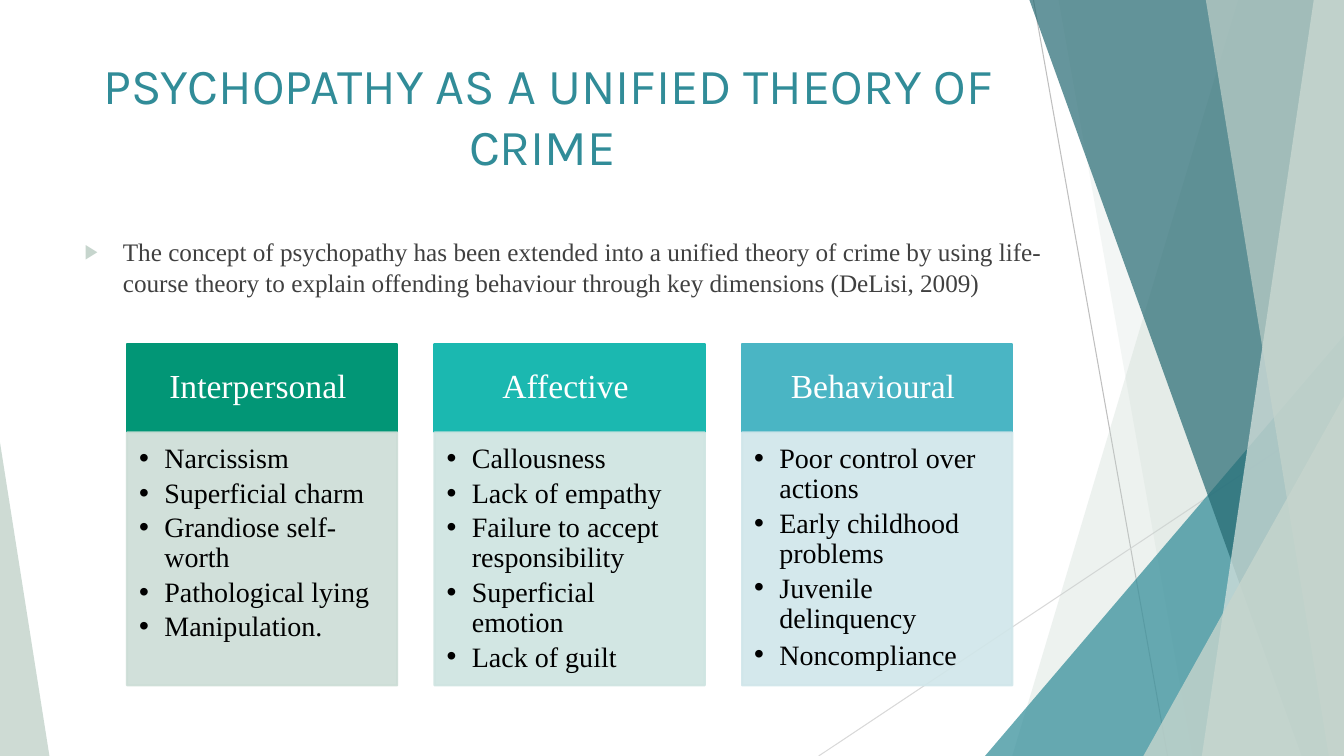
"""Build the slide on psychopathy as a unified theory of crime."""
import pptx
import pptx.dml.color
import pptx.enum.shapes
import pptx.enum.text
import pptx.oxml
import pptx.oxml.ns
import pptx.util

Inches = pptx.util.Inches
Pt = pptx.util.Pt
Align = pptx.enum.text.PP_ALIGN
Anchor = pptx.enum.text.MSO_ANCHOR

WIDTH, HEIGHT = 13.33, 7.5
COLOURS = {
    "white": "FFFFFF", "black": "000000", "body": "404040",
    "grey": "BFBFBF", "light grey": "D9D9D9",
    "teal": "318C98", "deep teal": "256972", "sage": "C6D5CD", "pale sage": "DDE6E1",
    "green": "029676", "green tint": "CCDDD6",
    "turquoise": "1BB8B0", "turquoise tint": "CEE4E1",
    "blue": "4AB5C4", "blue tint": "D0E6EA",
}
TITLE = "PSYCHOPATHY AS A UNIFIED THEORY OF CRIME "
CONCEPT = ("The concept of psychopathy has been extended into a unified theory of crime by using "
           "life-course theory to explain offending behaviour through key dimensions (DeLisi, 2009)")
DIMENSIONS = [
    ("Interpersonal ", "green",
     ["Narcissism", "Superficial charm", "Grandiose self-worth", "Pathological lying",
      "Manipulation."]),
    ("Affective ", "turquoise",
     ["Callousness", "Lack of empathy", "Failure to accept responsibility",
      "Superficial emotion", "Lack of guilt"]),
    ("Behavioural ", "blue",
     ["Poor control over actions", "Early childhood problems", "Juvenile delinquency",
      "Noncompliance"]),
]
BANDS = [
    (12.28, 10.04, "sage", 30),
    (10.5, 11.83, "sage", 20),
    None,
    (10.21, 12.91, "deep teal", 70),
    (13.03, 11.92, "pale sage", 70),
    (11.96, 13.18, "sage", 65),
]


class Slide:
    """Hold the style and the current page, and draw each kind of element."""

    def __init__(self, deck, font):
        self.page = deck.slides.add_slide(deck.slide_layouts[5])
        self.font = font

    def paint(self, colour_format, colour, opacity=100):
        """Set a colour and its opacity in percent."""
        colour_format.rgb = pptx.dml.color.RGBColor.from_string(COLOURS[colour])
        if opacity < 100:
            node = colour_format._xFill.find(pptx.oxml.ns.qn("a:srgbClr"))
            self.append(node, f'alpha val="{opacity * 1000}"')

    def append(self, parent, tag):
        """Append one empty drawing element to a parent."""
        space = pptx.oxml.ns.nsdecls("a")
        parent.append(pptx.oxml.parse_xml(f"<a:{tag} {space}/>"))

    def finish(self, shape, colour, opacity=100, border=None):
        """Give a shape its fill and border, without a shadow."""
        shape.shadow.inherit = False
        shape.fill.solid()
        self.paint(shape.fill.fore_color, colour, opacity)
        if border:
            shape.line.width = Pt(border)
            shape.line.fill.solid()
            self.paint(shape.line.fill.fore_color, colour, opacity)
        else:
            shape.line.fill.background()

    def line(self, start, end, colour):
        """Draw a thin straight line."""
        points = [Inches(value) for value in (*start, *end)]
        kind = pptx.enum.shapes.MSO_CONNECTOR.STRAIGHT
        line = self.page.shapes.add_connector(kind, *points)
        line.line.width = Pt(0.75)
        self.paint(line.line.color, colour)
        self.append(line._element.spPr, "effectLst")

    def band(self, top, bottom, colour, opacity):
        """Draw a band from a slanted left edge to the right edge of the page."""
        corners = [(WIDTH, 0), (WIDTH, HEIGHT), (bottom, HEIGHT)]
        builder = self.page.shapes.build_freeform(Inches(top), Inches(0))
        builder.add_line_segments([(Inches(x), Inches(y)) for x, y in corners], close=True)
        self.finish(builder.convert_to_shape(), colour, opacity)

    def triangle(self, left, top, width, apex, colour, opacity):
        """Draw a right triangle that stands on the bottom edge of the page."""
        kind = pptx.enum.shapes.MSO_SHAPE.ISOSCELES_TRIANGLE
        box = [Inches(value) for value in (left, top, width, HEIGHT - top)]
        shape = self.page.shapes.add_shape(kind, *box)
        shape.adjustments[0] = apex
        self.finish(shape, colour, opacity)

    def panel(self, left, top, width, height, colour, opacity=100):
        """Draw a bordered rectangle and return it."""
        kind = pptx.enum.shapes.MSO_SHAPE.RECTANGLE
        box = [Inches(value) for value in (left, top, width, height)]
        shape = self.page.shapes.add_shape(kind, *box)
        self.finish(shape, colour, opacity, border=1.5)
        return shape

    def frame(self, shape, anchor, insets):
        """Set the wrapping, anchor and insets of a shape's text and return its frame."""
        frame = shape.text_frame
        frame.word_wrap = True
        frame.vertical_anchor = anchor
        (frame.margin_left, frame.margin_top,
         frame.margin_right, frame.margin_bottom) = [Inches(value) for value in insets]
        return frame

    def span(self, para, text, size, colour, font=None):
        """Add one run of text."""
        span = para.add_run()
        span.text = text
        span.font.size = Pt(size)
        span.font.name = font or self.font
        self.paint(span.font.color, colour)

    def bullet(self, para, symbol, indent, colour=None, percent=100):
        """Give a paragraph a hanging bullet."""
        props = para._p.get_or_add_pPr()
        props.set("marL", str(Inches(indent)))
        props.set("indent", str(-Inches(indent)))
        if colour:
            self.append(props, "buClr")
            self.append(props[-1], f'srgbClr val="{COLOURS[colour]}"')
        self.append(props, f'buSzPct val="{percent * 1000}"')
        self.append(props, 'buFont typeface="Arial"')
        self.append(props, f'buChar char="{symbol}"')

    def title(self, text):
        """Place and format the title."""
        title = self.page.shapes.title
        title.left, title.top = Inches(0.74), Inches(0.42)
        title.width, title.height = Inches(9.4), Inches(1.44)
        para = self.frame(title, Anchor.MIDDLE, (0.1, 0.05, 0.1, 0.05)).paragraphs[0]
        para.alignment = Align.CENTER
        self.span(para, text, 36, "teal", "Karla")

    def statement(self, text):
        """Write the bulleted statement under the title."""
        box = self.page.shapes.add_textbox(Inches(0.74), Inches(2.3), Inches(10.29), Inches(0.9))
        para = self.frame(box, Anchor.TOP, (0.1, 0.05, 0.1, 0.05)).paragraphs[0]
        self.bullet(para, "▶", 0.38, "sage", 80)
        self.span(para, text, 18, "body")

    def dimension(self, left, heading, colour, traits):
        """Draw a headed column of traits."""
        header = self.panel(left, 3.41, 2.68, 0.88, colour)
        para = self.frame(header, Anchor.MIDDLE, (0.19, 0.11, 0.19, 0.11)).paragraphs[0]
        para.alignment = Align.CENTER
        para.line_spacing = 0.9
        self.span(para, heading, 24, "white")
        body = self.panel(left, 4.29, 2.68, 2.51, f"{colour} tint", 90)
        frame = self.frame(body, Anchor.TOP, (0.12, 0.12, 0.16, 0.17))
        for index, trait in enumerate(traits):
            para = frame.add_paragraph() if index else frame.paragraphs[0]
            para.alignment = Align.LEFT
            para.line_spacing = 0.9
            para.space_after = Pt(3)
            self.bullet(para, "•", 0.25)
            self.span(para, trait, 20, "black")
            if trait == "Noncompliance":
                self.span(para, " ", 22, "black")


def main():
    """Build and save the deck."""
    deck = pptx.Presentation()
    deck.slide_width, deck.slide_height = Inches(WIDTH), Inches(HEIGHT)
    slide = Slide(deck, "Times New Roman")
    slide.line((10.25, 0), (11.58, HEIGHT), "grey")
    slide.line((WIDTH, 4.03), (8.12, HEIGHT), "light grey")
    for band in BANDS:
        if band:
            slide.band(*band)
        else:
            slide.triangle(9.77, 3.33, 3.56, 1, "teal", 72)
    slide.triangle(11.34, 3.93, 1.99, 1, "sage", 80)
    slide.triangle(0, 4.39, 0.49, 0, "sage", 85)
    slide.title(TITLE)
    slide.statement(CONCEPT)
    for column, (heading, colour, traits) in enumerate(DIMENSIONS):
        slide.dimension(1.26 + 3.05 * column, heading, colour, traits)
    deck.save("out.pptx")


if __name__ == "__main__":
    main()
